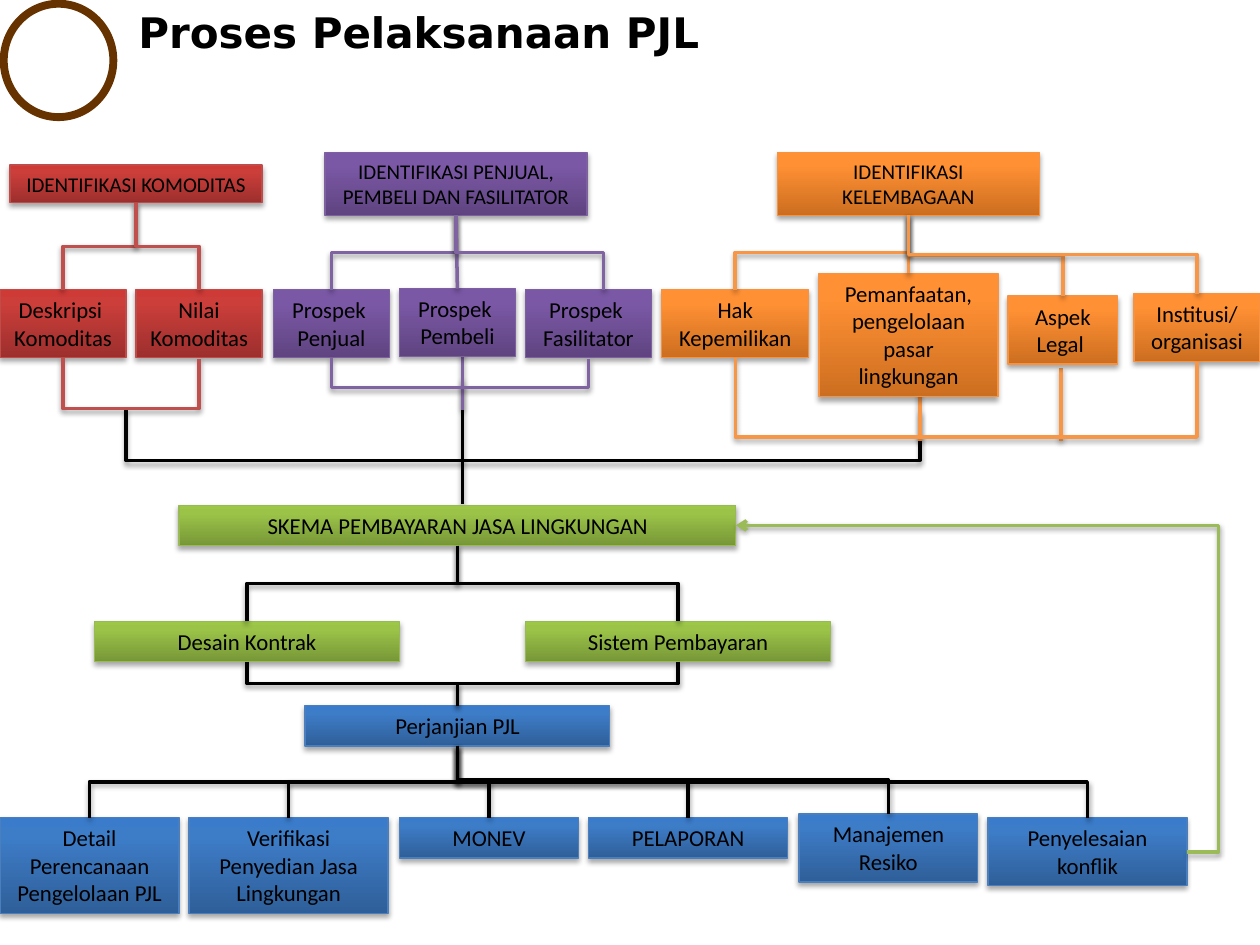
import lxml.etree
import pptx
import pptx.dml.color
import pptx.enum.shapes
import pptx.enum.text
import pptx.oxml.ns
import pptx.util
from copy import deepcopy

Inches = pptx.util.Inches
Pt = pptx.util.Pt
qn = pptx.oxml.ns.qn
SHAPES = pptx.enum.shapes.MSO_SHAPE
CONNECTORS = pptx.enum.shapes.MSO_CONNECTOR
ALIGN = pptx.enum.text.PP_ALIGN
ANCHOR = pptx.enum.text.MSO_ANCHOR
AUTO_SIZE = pptx.enum.text.MSO_AUTO_SIZE

COLOURS = {"black": "000000", "brown": "663300"}
THEMES = {
    "red": {"stops": ("9C2F2D", "CB3E3A", "CE3B37"), "edge": "BF4C48", "link": "C0504D"},
    "purple": {"stops": ("5F4480", "7B58A6", "7C57A8"), "edge": "7D60A0", "link": "8064A2"},
    "orange": {"stops": ("CC6E20", "FF9034", "FF9136"), "edge": "F69240", "link": "F79646"},
    "green": {"stops": ("779737", "9BC348", "9DC746"), "edge": "98B955", "link": "9BBB59"},
    "blue": {"stops": ("2F5F99", "3D7CC7", "3A7CCB"), "edge": "4B7EBC"},
}


def rgb(value):
    return pptx.dml.color.RGBColor.from_string(value)


def inches(*lengths):
    return tuple(Inches(length) for length in lengths)


def top(part):
    return part.left + part.width // 2, part.top


def bottom(part):
    return part.left + part.width // 2, part.top + part.height


def right(part):
    return part.left + part.width, part.top + part.height // 2


def cast_shadow(part, opacity, distance):
    effects = lxml.etree.SubElement(part._element.spPr, qn("a:effectLst"))
    shadow = lxml.etree.SubElement(
        effects, qn("a:outerShdw"), blurRad=str(Pt(3.1)), dist=str(Pt(distance)),
        dir="5400000", rotWithShape="0")
    colour = lxml.etree.SubElement(shadow, qn("a:srgbClr"), val=COLOURS["black"])
    lxml.etree.SubElement(colour, qn("a:alpha"), val=str(opacity * 1000))


def format_runs(frame, size, font, alignment, bold=False):
    for paragraph in frame.paragraphs:
        paragraph.alignment = alignment
        for run in paragraph.runs:
            run.font.size = Pt(size)
            run.font.name = font
            run.font.bold = bold
            run.font.color.rgb = rgb(COLOURS["black"])


def add_step(slide, origin, place, text, theme, size=13):
    left, upper, width, height = inches(*place)
    step = slide.shapes.add_shape(
        SHAPES.RECTANGLE, origin[0] + left, origin[1] + upper, width, height)
    step.fill.gradient()
    step.fill.gradient_angle = 90
    stop_list = step._element.spPr.find(".//" + qn("a:gsLst"))
    stop_list.insert(1, deepcopy(stop_list[0]))
    for stop, position, colour in zip(step.fill.gradient_stops, (0, 0.8, 1), theme["stops"]):
        stop.position = position
        stop.color.rgb = rgb(colour)
    step.line.color.rgb = rgb(theme["edge"])
    step.line.width = Pt(0.75)
    cast_shadow(step, 35, 1.8)
    frame = step.text_frame
    frame.text = text
    frame.word_wrap = True
    frame.auto_size = AUTO_SIZE.SHAPE_TO_FIT_TEXT
    frame.vertical_anchor = ANCHOR.TOP
    format_runs(frame, size, "Calibri", ALIGN.CENTER)
    return step


def finish_link(link, colour):
    link.line.color.rgb = rgb(colour)
    link.line.width = Pt(2)
    cast_shadow(link, 38, 1.6)


def add_straight(slide, start, end, colour, joins=None):
    link = slide.shapes.add_connector(CONNECTORS.STRAIGHT, *start, *end)
    if joins:
        link.begin_connect(joins[0], 2)
        link.end_connect(joins[1], 0)
    finish_link(link, colour)


def set_bend(link, share):
    guides = link._element.spPr.find(".//" + qn("a:avLst"))
    if guides is None:
        geometry = link._element.spPr.find(qn("a:prstGeom"))
        guides = lxml.etree.SubElement(geometry, qn("a:avLst"))
    lxml.etree.SubElement(guides, qn("a:gd"), name="adj1", fmla=f"val {round(share * 100000)}")


def add_elbow(slide, start, end, colour, bend_y=None):
    drop = max(end[1] - start[1], Inches(0.01))
    span = abs(end[0] - start[0])
    left = (start[0] + end[0] - drop) // 2
    upper = start[1] + (drop - span) // 2
    rightward = end[0] > start[0]
    begin_x, end_x = (left + drop, left) if rightward else (left, left + drop)
    link = slide.shapes.add_connector(CONNECTORS.ELBOW, begin_x, upper, end_x, upper + span)
    link._element.spPr.find(qn("a:xfrm")).set("rot", "16200000" if rightward else "5400000")
    set_bend(link, 0.5 if bend_y is None else (bend_y - start[1]) / drop)
    finish_link(link, colour)


def add_title(slide, box):
    left, upper, width, height = box
    ring = slide.shapes.add_shape(
        SHAPES.OVAL, left + Inches(0.03), upper + Inches(0.03), *inches(0.87, 0.9))
    ring.shadow.inherit = False
    ring.fill.background()
    ring.line.color.rgb = rgb(COLOURS["brown"])
    ring.line.width = Pt(4.5)
    title = slide.shapes.add_textbox(left + Inches(1), upper, width - Inches(1), height)
    frame = title.text_frame
    frame.text = "Proses Pelaksanaan PJL"
    frame.word_wrap = True
    frame.vertical_anchor = ANCHOR.MIDDLE
    format_runs(frame, 24, "DejaVu Sans", ALIGN.JUSTIFY, bold=True)


def add_merge(slide, box):
    left, upper, width, height = box
    add_elbow(slide, (left, upper), (left + width, upper), COLOURS["black"],
              upper + Inches(0.41))
    trunk_x = left + Inches(2.67)
    add_straight(slide, (trunk_x, upper - Inches(0.24)), (trunk_x, upper + height),
                 COLOURS["black"])


def add_identification(slide, box, theme, heading, aspects, stubs=(), last_shift=0):
    left, upper, width, height = box
    colour = theme["link"]
    for x, begin_y, end_y in stubs:
        stub_x = left + Inches(x)
        add_straight(slide, (stub_x, upper + Inches(begin_y)),
                     (stub_x, upper + Inches(end_y)), colour)
    head = add_step(slide, box, heading[1], heading[0], theme, 12)
    parts = [add_step(slide, box, place, text, theme) for text, place in aspects]
    for part in parts:
        x, y = top(part)
        if part is parts[-1]:
            x += Inches(last_shift)
        if abs(x - bottom(head)[0]) < Inches(0.03):
            add_straight(slide, bottom(head), (x, y), colour, (head, part))
        else:
            add_elbow(slide, bottom(head), (x, y), colour)
    add_elbow(slide, bottom(parts[0]), bottom(parts[-1]), colour, upper + height)


def add_scheme(slide, box):
    theme = THEMES["green"]
    scheme = add_step(slide, box, (0.67, 0, 4.42, 0.32),
                      "SKEMA PEMBAYARAN JASA LINGKUNGAN", theme)
    branches = [add_step(slide, box, (x, 0.92, 2.42, 0.32), text, theme)
                for x, text in ((0, "Desain Kontrak"), (3.42, "Sistem Pembayaran"))]
    for branch in branches:
        add_elbow(slide, bottom(scheme), top(branch), COLOURS["black"])
    return scheme, branches


def add_agreement(slide, box, branches):
    theme = THEMES["blue"]
    agreement = add_step(slide, box, (2.42, 0, 2.42, 0.32), "Perjanjian PJL", theme)
    for branch in branches:
        add_elbow(slide, bottom(branch), top(agreement), COLOURS["black"])
    activities = (
        ("Detail Perencanaan Pengelolaan PJL", 0.89, 0.76),
        ("Verifikasi Penyedian Jasa Lingkungan", 0.89, 0.76),
        ("MONEV", 0.89, 0.32),
        ("PELAPORAN", 0.89, 0.32),
        ("Manajemen Resiko", 0.86, 0.54),
        ("Penyelesaian konflik", 0.89, 0.54),
    )
    for index, (text, y, height) in enumerate(activities):
        pair, second = divmod(index, 2)
        place = (pair * 3.17 + second * 1.5, y, 1.58 if second else 1.42, height)
        activity = add_step(slide, box, place, text, theme)
        add_elbow(slide, bottom(agreement), top(activity), COLOURS["black"])
    return activity


def add_feedback(slide, conflict, scheme):
    start, end = right(conflict), right(scheme)
    link = slide.shapes.add_connector(CONNECTORS.ELBOW, *start, *end)
    set_bend(link, -Inches(0.25) / (start[0] - end[0]))
    finish_link(link, THEMES["green"]["link"])
    lxml.etree.SubElement(link.line._get_or_add_ln(), qn("a:tailEnd"), type="arrow")


def main():
    deck = pptx.Presentation()
    deck.slide_width, deck.slide_height = inches(10, 7.5)
    slide = deck.slides.add_slide(deck.slide_layouts[6])
    add_merge(slide, inches(1, 3.25, 6.3, 0.75))
    add_title(slide, inches(0, 0, 9.5, 0.5))
    add_identification(
        slide, inches(0, 1.21, 2.08, 2.04), THEMES["red"],
        ("IDENTIFIKASI KOMODITAS", (0.08, 0.1, 2, 0.3)),
        (("Deskripsi \nKomoditas", (0, 1.09, 1, 0.54)),
         ("Nilai Komoditas", (1.08, 1.09, 1, 0.54))))
    add_identification(
        slide, inches(2.17, 1.21, 3, 1.87), THEMES["purple"],
        ("IDENTIFIKASI PENJUAL, PEMBELI DAN FASILITATOR", (0.41, 0, 2.08, 0.5)),
        (("Prospek \nPenjual", (0, 1.09, 0.92, 0.54)),
         ("Prospek \nPembeli", (1, 1.08, 0.92, 0.54)),
         ("Prospek \nFasilitator", (2, 1.09, 1, 0.54))),
        stubs=((1.5, 1.54, 2.04),), last_shift=0.12)
    add_identification(
        slide, inches(5.25, 1.21, 4.75, 2.26), THEMES["orange"],
        ("IDENTIFIKASI KELEMBAGAAN", (0.92, 0, 2.08, 0.5)),
        (("Hak Kepemilikan", (0, 1.09, 1.17, 0.54)),
         ("Pemanfaatan, pengelolaan pasar lingkungan", (1.25, 0.96, 1.42, 0.98)),
         ("Aspek Legal ", (2.75, 1.14, 0.87, 0.54)),
         ("Institusi/ organisasi", (3.75, 1.12, 1, 0.54))),
        stubs=((2.05, 1.79, 2.29), (3.17, 1.71, 2.29)))
    scheme, branches = add_scheme(slide, inches(0.75, 4.01, 5.84, 1.24))
    conflict = add_agreement(slide, inches(0, 5.6, 9.42, 1.65), branches)
    add_feedback(slide, conflict, scheme)
    deck.save("out.pptx")


if __name__ == "__main__":
    main()
